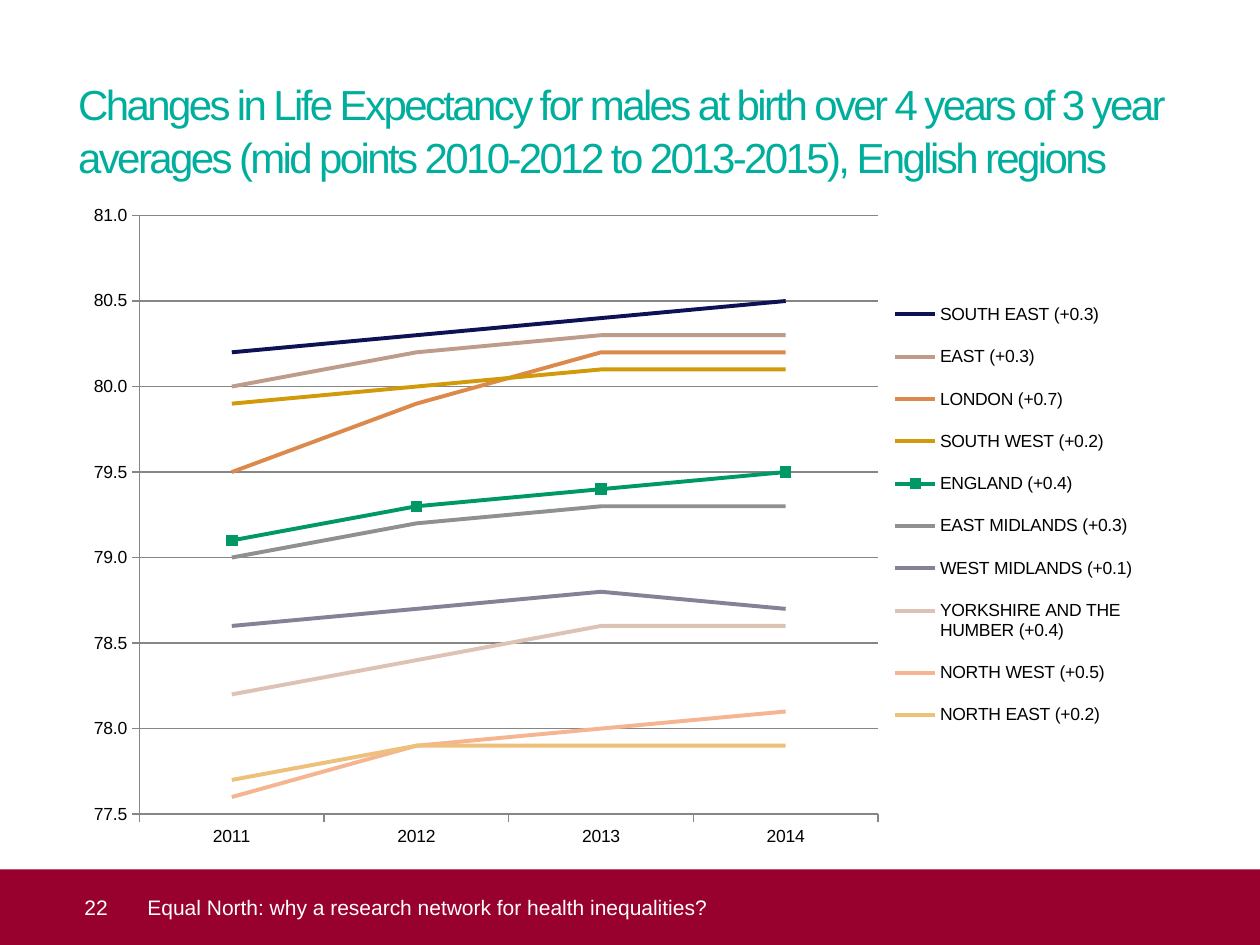
from dataclasses import dataclass

from lxml.etree import SubElement
from pptx import Presentation
from pptx.chart.data import CategoryChartData
from pptx.dml.color import RGBColor
from pptx.enum.chart import XL_CHART_TYPE, XL_LEGEND_POSITION, XL_MARKER_STYLE, XL_TICK_MARK
from pptx.enum.shapes import MSO_SHAPE
from pptx.enum.text import MSO_ANCHOR, PP_ALIGN
from pptx.oxml import parse_xml
from pptx.oxml.ns import nsdecls, qn
from pptx.util import Inches, Pt


@dataclass(frozen=True)
class Theme:
    font: str = "Arial"
    title: str = "00AE9E"
    band: str = "98002E"
    light: str = "FFFFFF"
    dark: str = "000000"
    grid: str = "868686"
    title_size: float = 24
    footer_size: float = 12
    chart_size: float = 10
    line_width: float = 2.25


THEME = Theme()
WIDTH, HEIGHT = 10, 7.5
TITLE = ("Changes in Life Expectancy for males at birth over 4 years of 3 year "
         "averages (mid points 2010-2012 to 2013-2015), English regions")
FOOTER = "Equal North: why a research network for health inequalities?"
YEARS = ["2011", "2012", "2013", "2014"]
REGIONS = [
    ("SOUTH EAST (+0.3)", (80.2, 80.3, 80.4, 80.5), "0C1254"),
    ("EAST (+0.3)", (80.0, 80.2, 80.3, 80.3), "BE9C8B"),
    ("LONDON (+0.7)", (79.5, 79.9, 80.2, 80.2), "DB8A4C"),
    ("SOUTH WEST (+0.2)", (79.9, 80.0, 80.1, 80.1), "D09A0B"),
    ("ENGLAND (+0.4)", (79.1, 79.3, 79.4, 79.5), "009966"),
    ("EAST MIDLANDS (+0.3)", (79.0, 79.2, 79.3, 79.3), "8F9092"),
    ("WEST MIDLANDS (+0.1)", (78.6, 78.7, 78.8, 78.7), "838296"),
    ("YORKSHIRE AND THE HUMBER (+0.4)", (78.2, 78.4, 78.6, 78.6), "DDC3B5"),
    ("NORTH WEST (+0.5)", (77.6, 77.9, 78.0, 78.1), "F5B591"),
    ("NORTH EAST (+0.2)", (77.7, 77.9, 77.9, 77.9), "EDC07C"),
]
MARKED_REGION = "ENGLAND (+0.4)"


def style_font(font, size, color):
    font.name = THEME.font
    font.size = Pt(size)
    font.color.rgb = RGBColor.from_string(color)


def set_text(sp, text, size, color, anchor, indent=0):
    tf = sp.text_frame
    tf.word_wrap = True
    tf.vertical_anchor = anchor
    tf.margin_left = Inches(indent)
    tf.margin_top = tf.margin_right = tf.margin_bottom = 0
    tf.text = text
    p = tf.paragraphs[0]
    p.alignment = PP_ALIGN.LEFT
    style_font(p.runs[0].font, size, color)
    return p


def add_title(s, x, y, w, h):
    sp = s.shapes.title
    sp.left, sp.top, sp.width, sp.height = map(Inches, (x, y, w, h))
    p = set_text(sp, TITLE, THEME.title_size, THEME.title, MSO_ANCHOR.TOP)
    p.line_spacing = 1.06
    p.runs[0].font._element.set("spc", "-150")


def add_footer(s, x, y, w, h):
    band = s.shapes.add_shape(MSO_SHAPE.RECTANGLE, *map(Inches, (x, y, w, h)))
    band.shadow.inherit = False
    band.fill.solid()
    band.fill.fore_color.rgb = RGBColor.from_string(THEME.band)
    band.line.fill.background()
    set_text(band, "22", THEME.footer_size, THEME.light, MSO_ANCHOR.MIDDLE, w * 0.067)
    label = s.shapes.add_textbox(*map(Inches, (x + w * 0.098, y, w * 0.882, h)))
    set_text(label, FOOTER, THEME.footer_size, THEME.light, MSO_ANCHOR.MIDDLE, w * 0.019)


def set_layout(element, before, inner, **shares):
    for old in element.findall(qn("c:layout")):
        element.remove(old)
    layout = parse_xml(f"<c:layout {nsdecls('c')}><c:manualLayout/></c:layout>")
    settings = {"layoutTarget": "inner"} if inner else {}
    settings.update(xMode="edge", yMode="edge", **shares)
    for name, value in settings.items():
        SubElement(layout[0], qn(f"c:{name}")).set("val", str(value))
    if before is None:
        element.insert(0, layout)
    else:
        element.find(qn(before)).addnext(layout)


def style_line(line, color, width):
    line.color.rgb = RGBColor.from_string(color)
    line.width = Pt(width)


def style_axes(chart):
    for axis in (chart.category_axis, chart.value_axis):
        axis.major_tick_mark = XL_TICK_MARK.OUTSIDE
        axis.minor_tick_mark = XL_TICK_MARK.NONE
        style_line(axis.format.line, THEME.grid, 0.75)
    axis = chart.value_axis
    axis.minimum_scale, axis.maximum_scale, axis.major_unit = 77.5, 81, 0.5
    axis.tick_labels.number_format = "0.0"
    axis.tick_labels.number_format_is_linked = False
    axis.has_major_gridlines = True
    style_line(axis.major_gridlines.format.line, THEME.grid, 0.75)


def style_series(series, color):
    series.smooth = False
    style_line(series.format.line, color, THEME.line_width)
    marker = series.marker
    if series.name != MARKED_REGION:
        marker.style = XL_MARKER_STYLE.NONE
        return
    marker.style = XL_MARKER_STYLE.SQUARE
    marker.size = 6
    marker.format.fill.solid()
    marker.format.fill.fore_color.rgb = RGBColor.from_string(color)
    style_line(marker.format.line, color, 0.75)


def add_region_chart(s, x, y, w, h):
    data = CategoryChartData(number_format="0.0")
    data.categories = YEARS
    for name, values, _ in REGIONS:
        data.add_series(name, values)
    chart = s.shapes.add_chart(
        XL_CHART_TYPE.LINE_MARKERS, *map(Inches, (x, y, w, h)), data).chart
    chart.has_title = False
    style_font(chart.font, THEME.chart_size, THEME.dark)
    style_axes(chart)
    plot = chart.plots[0]
    plot.vary_by_categories = False
    for series, (_, _, color) in zip(plot.series, REGIONS):
        style_series(series, color)
    chart.has_legend = True
    legend = chart.legend
    legend.position = XL_LEGEND_POSITION.RIGHT
    legend.include_in_layout = False
    plot_area = chart._chartSpace.chart.plotArea
    set_layout(plot_area, None, True, x=0.06, y=0.03, w=0.68, h=0.9)
    set_layout(legend._element, "c:legendPos", False, x=0.74, y=0.13, w=0.25, h=0.7)


def main():
    prs = Presentation()
    prs.slide_width, prs.slide_height = Inches(WIDTH), Inches(HEIGHT)
    s = prs.slides.add_slide(prs.slide_layouts[5])
    add_title(s, WIDTH * 0.062, HEIGHT * 0.08, WIDTH * 0.878, HEIGHT * 0.105)
    add_footer(s, 0, HEIGHT * 0.92, WIDTH, HEIGHT * 0.08)
    add_region_chart(s, WIDTH * 0.059, HEIGHT * 0.207, WIDTH * 0.862, HEIGHT * 0.704)
    prs.save("out.pptx")


if __name__ == "__main__":
    main()
